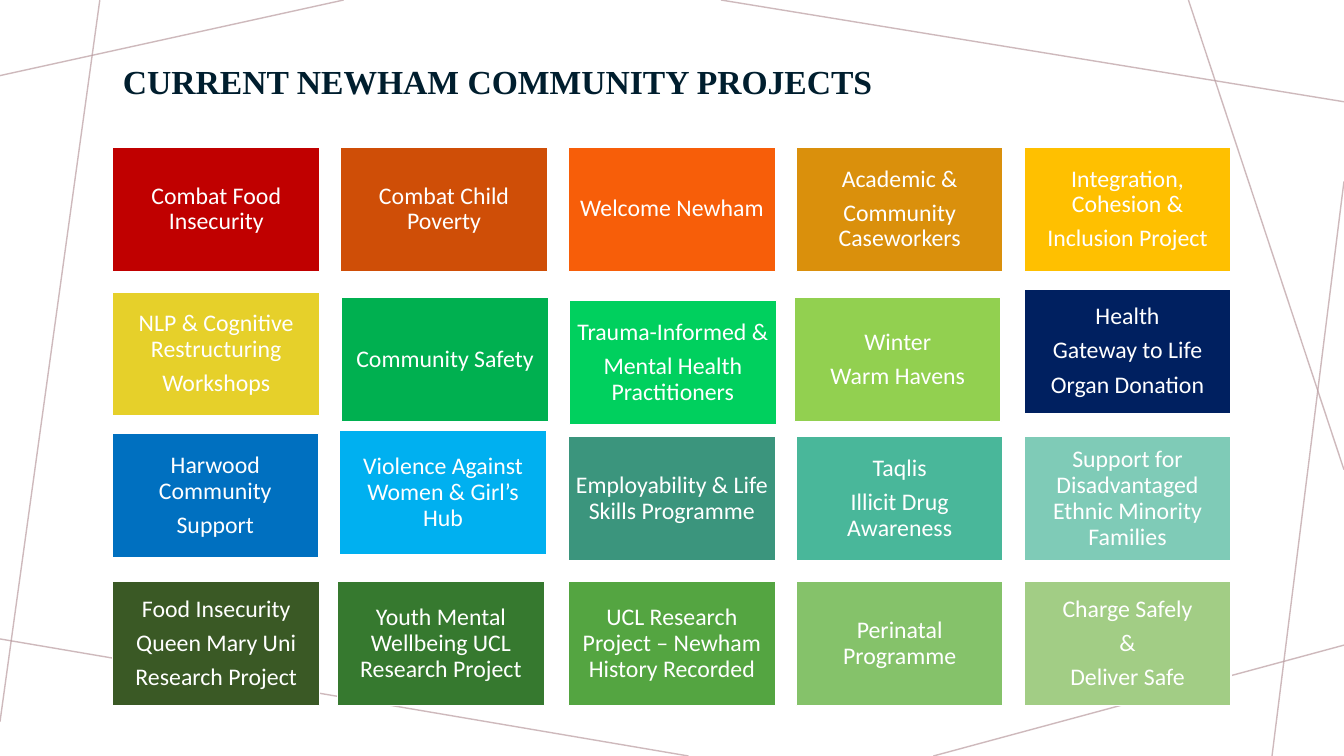
from lxml.etree import SubElement
from pptx import Presentation
from pptx.dml.color import RGBColor
from pptx.enum.shapes import MSO_CONNECTOR, MSO_SHAPE
from pptx.enum.text import MSO_ANCHOR, MSO_AUTO_SIZE, PP_ALIGN
from pptx.oxml.ns import qn
from pptx.util import Pt

WHITE = RGBColor(0xFF, 0xFF, 0xFF)
NAVY_INK = RGBColor(0x00, 0x1E, 0x2E)
MAUVE = RGBColor(0xBA, 0x9C, 0xA0)

SLIDE_BOX = (0, 0, 960, 540)
TITLE_BOX = (80.6, 30.2, 860.4, 59)
PROJECTS_BOX = (80.6, 105.1, 798.7, 399)
CARD_WIDTH, CARD_HEIGHT = 147.8, 88.7

TITLE_FONT = {"name": "Times New Roman", "size": Pt(24), "bold": True}
CARD_FONT = {"name": "Calibri", "size": Pt(17)}
CARD_FRAME = {
    "word_wrap": True,
    "vertical_anchor": MSO_ANCHOR.MIDDLE,
    "margin_left": Pt(5),
    "margin_right": Pt(5),
    "margin_top": Pt(5),
    "margin_bottom": Pt(5),
}
CARD_PARAGRAPH = {
    "alignment": PP_ALIGN.CENTER,
    "line_spacing": 0.9,
    "space_after": Pt(6),
}

BACKDROP_LINES = [
    ((245.5, 0), (0, 54)),
    ((71.3, 0), (0, 515.5)),
    ((491.8, 540), (0, 456.4)),
    ((960, 460.8), (666.7, 540)),
    ((960, 129.6), (908.6, 540)),
    ((960, 335.5), (848.9, 0)),
    ((960, 72.7), (515, 0)),
]

PROJECTS = [
    [
        ("Combat Food Insecurity", RGBColor(0xC0, 0x00, 0x00)),
        ("Combat Child Poverty", RGBColor(0xCF, 0x4E, 0x07)),
        ("Welcome Newham", RGBColor(0xF7, 0x5E, 0x09)),
        ("Academic &\nCommunity Caseworkers", RGBColor(0xDA, 0x90, 0x0C)),
        ("Integration, Cohesion &\nInclusion Project", RGBColor(0xFF, 0xC0, 0x00)),
    ],
    [
        ("NLP & Cognitive Restructuring\nWorkshops", RGBColor(0xE6, 0xD0, 0x2A)),
        ("Community Safety", RGBColor(0x00, 0xB0, 0x50)),
        ("Trauma-Informed &\nMental Health Practitioners", RGBColor(0x00, 0xD0, 0x5E)),
        ("Winter\nWarm Havens", RGBColor(0x92, 0xD0, 0x50)),
        ("Health\nGateway to Life\nOrgan Donation", RGBColor(0x00, 0x20, 0x60)),
    ],
    [
        ("Harwood Community\nSupport", RGBColor(0x00, 0x70, 0xC0)),
        ("Violence Against Women & Girl’s Hub", RGBColor(0x00, 0xB0, 0xF0)),
        ("Employability & Life Skills Programme", RGBColor(0x3B, 0x95, 0x7D)),
        ("Taqlis\nIllicit Drug Awareness", RGBColor(0x49, 0xB7, 0x9A)),
        ("Support for Disadvantaged Ethnic Minority Families", RGBColor(0x7F, 0xCB, 0xB7)),
    ],
    [
        ("Food Insecurity\nQueen Mary Uni\nResearch Project", RGBColor(0x3A, 0x59, 0x25)),
        ("Youth Mental Wellbeing UCL Research Project", RGBColor(0x36, 0x79, 0x2F)),
        ("UCL Research Project – Newham History Recorded", RGBColor(0x54, 0xA5, 0x41)),
        ("Perinatal Programme", RGBColor(0x85, 0xC2, 0x6A)),
        ("Charge Safely\n&\nDeliver Safe", RGBColor(0xA2, 0xCD, 0x85)),
    ],
]

CARD_SHIFTS = {
    (1, 1): (0.7, 4),
    (1, 2): (0.7, 6),
    (1, 3): (-1.4, 4),
    (1, 4): (0, -2),
    (2, 0): (-0.7, -2.2),
    (2, 1): (-0.7, -4.3),
    (3, 1): (-2.2, 0),
}


def apply_format(target, values):
    for attribute, value in values.items():
        setattr(target, attribute, value)


def add_backdrop(slide, box):
    left, top, _, _ = box
    for (start_x, start_y), (end_x, end_y) in BACKDROP_LINES:
        ray = slide.shapes.add_connector(
            MSO_CONNECTOR.STRAIGHT,
            Pt(left + start_x), Pt(top + start_y),
            Pt(left + end_x), Pt(top + end_y),
        )
        ray.line.color.rgb = MAUVE
        ray.line.width = Pt(1)
        tint = next(ray.line._ln.iter(qn("a:srgbClr")))
        SubElement(tint, qn("a:alpha"), val="70000")
        SubElement(ray._element.spPr, qn("a:effectLst"))


def add_title(slide, box):
    heading = slide.shapes.title
    apply_format(heading, dict(zip(("left", "top", "width", "height"), map(Pt, box))))
    frame = heading.text_frame
    frame.text = "CURRENT NEWHAM COMMUNITY PROJECTS"
    apply_format(frame, {
        "word_wrap": True,
        "auto_size": MSO_AUTO_SIZE.NONE,
        "vertical_anchor": MSO_ANCHOR.MIDDLE,
    })
    line = frame.paragraphs[0]
    apply_format(line, {"alignment": PP_ALIGN.LEFT, "line_spacing": 0.9})
    apply_format(line.runs[0].font, TITLE_FONT)
    line.runs[0].font.color.rgb = NAVY_INK


def add_card(slide, box, wording, colour):
    card = slide.shapes.add_shape(MSO_SHAPE.RECTANGLE, *map(Pt, box))
    card.shadow.inherit = False
    card.fill.solid()
    card.fill.fore_color.rgb = colour
    card.line.color.rgb = WHITE
    card.line.width = Pt(1)
    card.text_frame.text = wording
    apply_format(card.text_frame, CARD_FRAME)
    for line in card.text_frame.paragraphs:
        apply_format(line, CARD_PARAGRAPH)
        apply_format(line.runs[0].font, CARD_FONT)
        line.runs[0].font.color.rgb = WHITE


def add_projects(slide, box):
    left, top, width, height = box
    column_step = (width - CARD_WIDTH) / (len(PROJECTS[0]) - 1)
    row_step = (height - CARD_HEIGHT) / (len(PROJECTS) - 1)
    for row, projects in enumerate(PROJECTS):
        for column, (wording, colour) in enumerate(projects):
            shift_x, shift_y = CARD_SHIFTS.get((row, column), (0, 0))
            card_box = (
                left + column * column_step + shift_x,
                top + row * row_step + shift_y,
                CARD_WIDTH,
                CARD_HEIGHT,
            )
            add_card(slide, card_box, wording, colour)


def main():
    deck = Presentation()
    deck.slide_width, deck.slide_height = Pt(SLIDE_BOX[2]), Pt(SLIDE_BOX[3])
    slide = deck.slides.add_slide(deck.slide_layouts.get_by_name("Title Only"))
    slide.background.fill.solid()
    slide.background.fill.fore_color.rgb = WHITE
    add_backdrop(slide, SLIDE_BOX)
    add_title(slide, TITLE_BOX)
    add_projects(slide, PROJECTS_BOX)
    deck.save("out.pptx")


if __name__ == "__main__":
    main()
